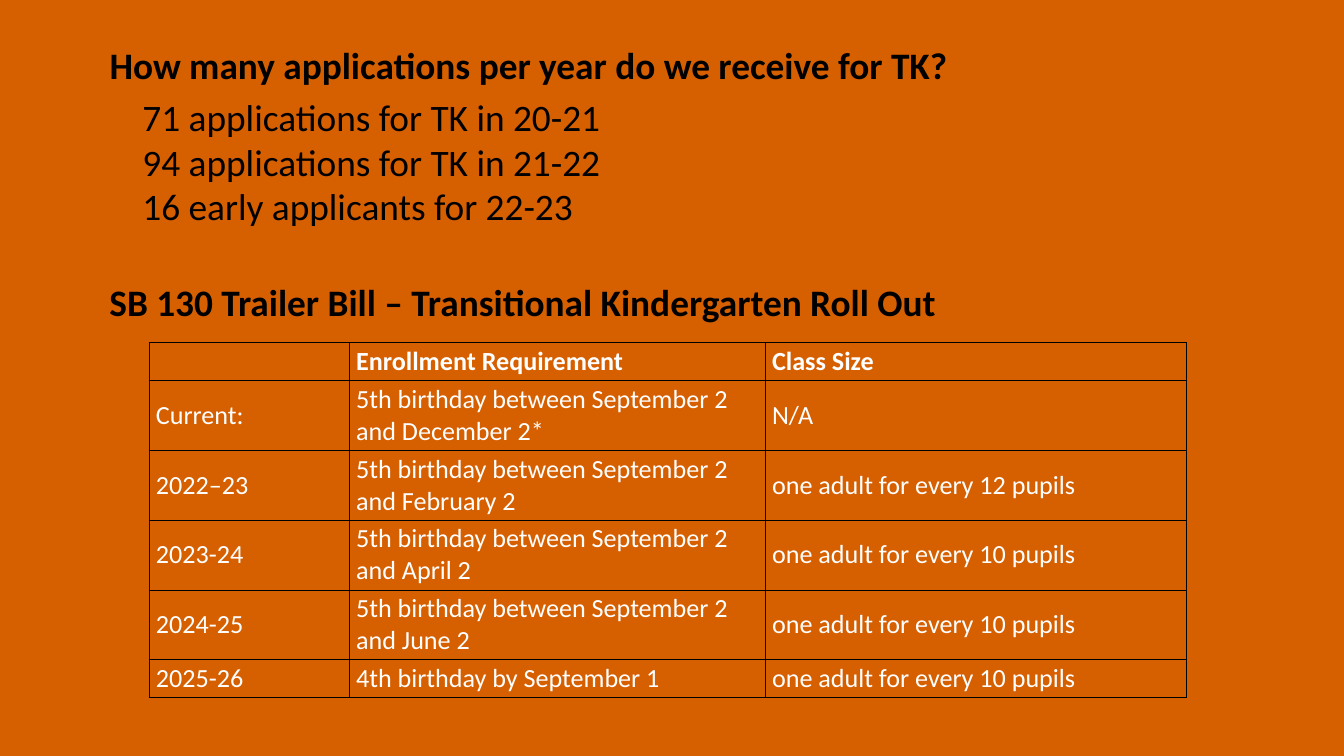
from lxml import etree
from pptx import Presentation
from pptx import util as u
from pptx.dml.color import RGBColor
from pptx.enum import text
from pptx.oxml.ns import qn

Inches = u.Inches
HEADING = {"name": "Calibri", "size": u.Pt(40), "bold": True}
LISTING = {**HEADING, "bold": False}
HEADER_CELL = {"name": "Calibri", "size": u.Pt(28), "bold": True}
BODY_CELL = {**HEADER_CELL, "bold": False}
BLACK, WHITE, ORANGE = "000000", "FFFFFF", "D65F00"

APPLICATIONS = [
    "71 applications for TK in 20-21",
    "94 applications for TK in 21-22",
    "16 early applicants for 22-23",
]
ROLL_OUT = [
    ("", "Enrollment Requirement", "Class Size"),
    ("Current:", "5th birthday between September 2 and December 2*", "N/A"),
    ("2022–23", "5th birthday between September 2 and February 2", "one adult for every 12 pupils"),
    ("2023-24", "5th birthday between September 2 and April 2", "one adult for every 10 pupils"),
    ("2024-25", "5th birthday between September 2 and June 2", "one adult for every 10 pupils"),
    ("2025-26", "4th birthday by September 1", "one adult for every 10 pupils"),
]


def color(value):
    return RGBColor.from_string(value)


def set_values(target, values):
    for name, value in values.items():
        setattr(target, name, value)


def write_para(para, words, style, ink):
    set_values(para, {"alignment": text.PP_ALIGN.LEFT, "space_before": u.Pt(0)})
    span = para.add_run()
    span.text = words
    set_values(span.font, style)
    span.font.color.rgb = color(ink)


def place_text(shape, box, lines, style):
    set_values(shape, dict(zip(("left", "top", "width", "height"), map(Inches, box))))
    frame = shape.text_frame
    set_values(frame, {
        "word_wrap": True,
        "auto_size": text.MSO_AUTO_SIZE.NONE,
        "vertical_anchor": text.MSO_ANCHOR.TOP,
    })
    for index, words in enumerate(lines):
        para = frame.add_paragraph() if index else frame.paragraphs[0]
        write_para(para, words, style, BLACK)
    return frame


def place_list(shape, box, lines):
    for para in place_text(shape, box, lines, LISTING).paragraphs:
        properties = para._p.get_or_add_pPr()
        properties.set("marL", "0")
        properties.set("indent", "0")
        etree.SubElement(properties, qn("a:buNone"))


def add_borders(cell):
    properties = cell._tc.get_or_add_tcPr()
    for index, side in enumerate(("lnL", "lnR", "lnT", "lnB")):
        line = etree.Element(qn(f"a:{side}"), w=str(u.Pt(1)))
        fill = etree.SubElement(line, qn("a:solidFill"))
        etree.SubElement(fill, qn("a:srgbClr"), val=BLACK)
        properties.insert(index, line)


def place_table(page, box, rows, widths, heights):
    frame = page.shapes.add_table(len(rows), len(widths), *map(Inches, box))
    table = frame.table
    set_values(table, {"first_row": False, "horz_banding": False})
    for column, width in zip(table.columns, widths):
        column.width = Inches(width)
    for row, height, words in zip(table.rows, heights, rows):
        row.height = Inches(height)
        style = HEADER_CELL if words is rows[0] else BODY_CELL
        for cell, entry in zip(row.cells, words):
            set_values(cell, {
                "vertical_anchor": text.MSO_ANCHOR.MIDDLE,
                "margin_top": Inches(0.04),
                "margin_bottom": Inches(0.04),
            })
            cell.fill.background()
            add_borders(cell)
            para = cell.text_frame.paragraphs[0]
            para.font.size = style["size"]
            if entry:
                write_para(para, entry, style, WHITE)


def main():
    deck = Presentation()
    set_values(deck, {"slide_width": Inches(20), "slide_height": Inches(11.25)})
    page = deck.slides.add_slide(deck.slide_layouts[1])
    page.background.fill.solid()
    page.background.fill.fore_color.rgb = color(ORANGE)

    place_text(page.shapes.title, (1.53, 0.58, 12.81, 0.77),
               ["How many applications per year do we receive for TK?"], HEADING)
    place_list(page.placeholders[1], (2.02, 1.35, 7.73, 2.12), APPLICATIONS)
    subheading = page.shapes.add_textbox(0, 0, 0, 0)
    place_text(subheading, (1.53, 4.1, 16.8, 0.77),
               ["SB 130 Trailer Bill – Transitional Kindergarten Roll Out"], HEADING)
    place_table(page, (2.22, 5.1, 15.43, 5.28), ROLL_OUT,
                (2.98, 6.19, 6.26), [0.56] + [1.04] * 4 + [0.56])
    deck.save("out.pptx")


if __name__ == "__main__":
    main()
